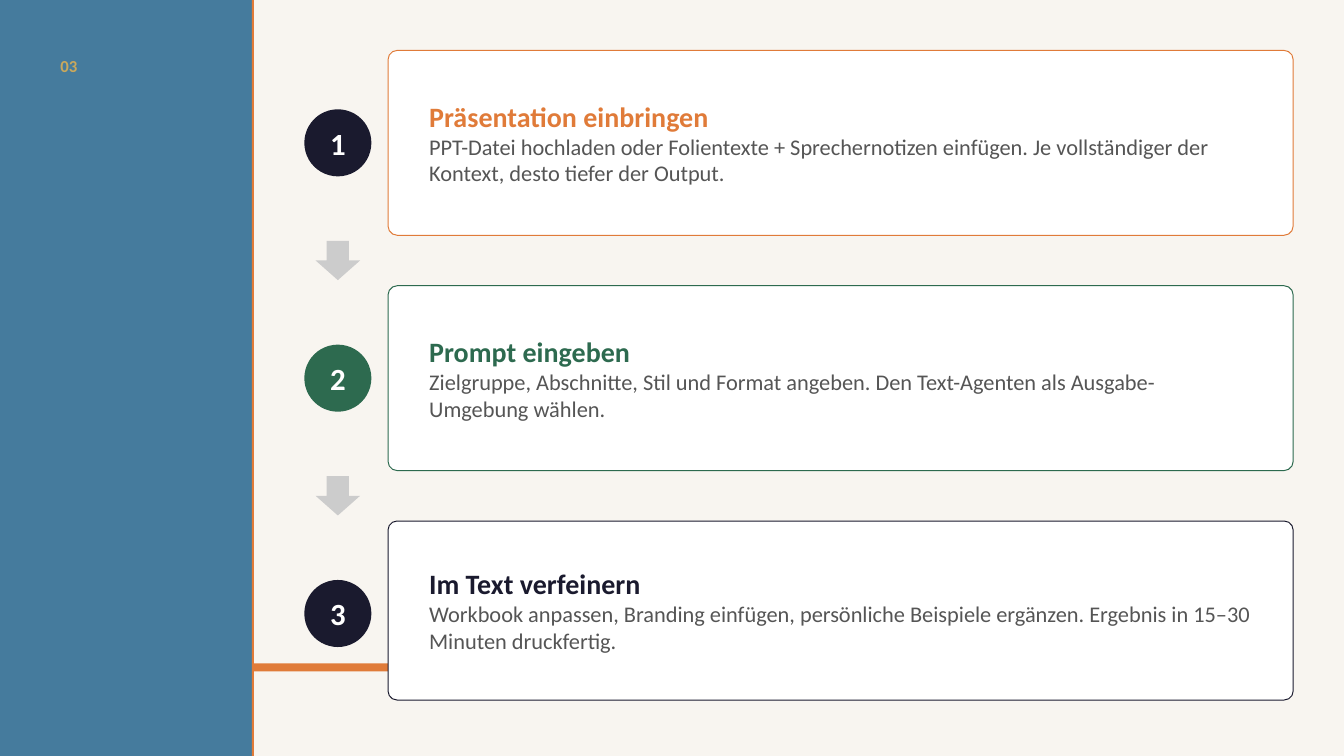
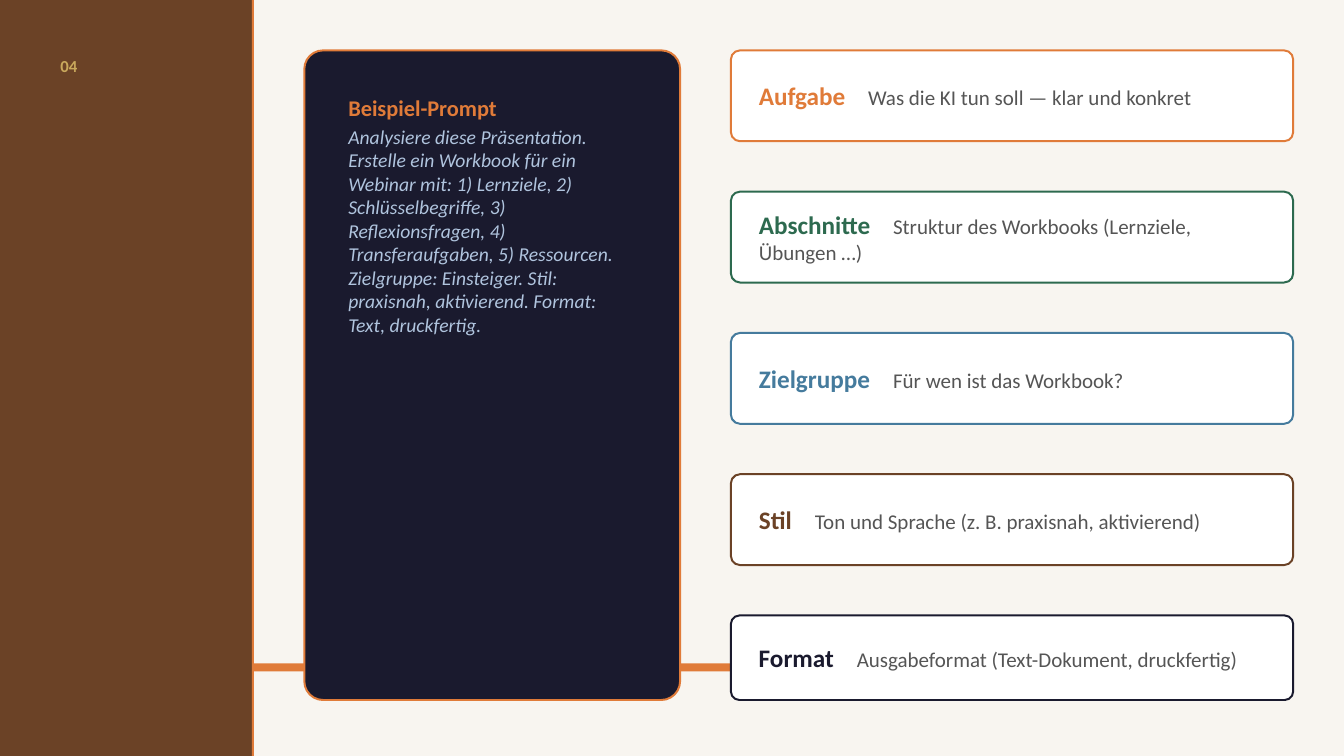
import lxml.etree
import pptx
import pptx.dml.color
import pptx.enum.shapes
import pptx.enum.text
import pptx.oxml.ns
import pptx.util

Cm = pptx.util.Cm
Pt = pptx.util.Pt
RGB = pptx.dml.color.RGBColor
SHAPE = pptx.enum.shapes.MSO_SHAPE
ANCHOR = pptx.enum.text.MSO_ANCHOR
ALIGN = pptx.enum.text.PP_ALIGN

CREAM = RGB(0xF8, 0xF5, 0xF0)
ORANGE = RGB(0xE0, 0x7B, 0x39)
BLUE = RGB(0x45, 0x7B, 0x9D)
BROWN = RGB(0x6B, 0x42, 0x26)
GREEN = RGB(0x2D, 0x6A, 0x4F)
NAVY = RGB(0x1A, 0x1A, 0x2E)
GOLD = RGB(0xC9, 0xA8, 0x5C)
GREY = RGB(0x55, 0x55, 0x55)
SILVER = RGB(0xCC, 0xCC, 0xCC)
STEEL = RGB(0xB0, 0xC4, 0xDE)
WHITE = RGB(0xFF, 0xFF, 0xFF)
FONT = "Calibri"

STEPS = [
    ("Präsentation einbringen",
     "PPT-Datei hochladen oder Folientexte + Sprechernotizen einfügen. "
     "Je vollständiger der Kontext, desto tiefer der Output.", ORANGE, NAVY),
    ("Prompt eingeben",
     "Zielgruppe, Abschnitte, Stil und Format angeben. "
     "Den Text-Agenten als Ausgabe-Umgebung wählen.", GREEN, GREEN),
    ("Im Text verfeinern",
     "Workbook anpassen, Branding einfügen, persönliche Beispiele ergänzen. "
     "Ergebnis in 15–30 Minuten druckfertig.", NAVY, NAVY),
]
PROMPT_TITLE = "Beispiel-Prompt"
PROMPT = (
    "Analysiere diese Präsentation. Erstelle ein Workbook für ein Webinar mit: "
    "1) Lernziele, 2) Schlüsselbegriffe, 3) Reflexionsfragen, 4) Transferaufgaben, "
    "5) Ressourcen. Zielgruppe: Einsteiger. Stil: praxisnah, aktivierend. "
    "Format: Text, druckfertig."
)
FIELDS = [
    ("Aufgabe", "Was die KI tun soll — klar und konkret", ORANGE, 2.75),
    ("Abschnitte", "Struktur des Workbooks (Lernziele, Übungen …)", GREEN, 3.38),
    ("Zielgruppe", "Für wen ist das Workbook?", BLUE, 3.38),
    ("Stil", "Ton und Sprache (z. B. praxisnah, aktivierend)", BROWN, 1.41),
    ("Format", "Ausgabeformat (Text-Dokument, druckfertig)", NAVY, 2.47),
]

SLIDE_W, SLIDE_H = 33.87, 19.05
SIDEBAR_W = 6.35
LEFT, TOP, RIGHT, BOTTOM = 7.67, 1.27, 32.59, 17.64
GAP = 1.27
STEP_LEFT, STEP_H = 9.78, 4.66
CIRCLE = 1.69
ARROW_W, ARROW_H = 1.12, 0.99
PROMPT_W = 9.47
FIELD_LEFT, FIELD_H = 18.42, 2.29


def add_run(p, text, size, color, bold=False, italic=False):
    r = p.add_run()
    r.text = text
    r.font.name = FONT
    r.font.size = Pt(size)
    r.font.color.rgb = color
    r.font.bold = bold
    r.font.italic = italic


def add_shape(slide, kind, left, top, width, height, fill):
    sp = slide.shapes.add_shape(kind, Cm(left), Cm(top), Cm(width), Cm(height))
    sp.shadow.inherit = False
    sp.fill.solid()
    sp.fill.fore_color.rgb = fill
    sp.line.fill.background()
    return sp


def add_card(slide, left, top, width, height, fill, line, line_w, radius, inset_x, inset_y):
    sp = add_shape(slide, SHAPE.ROUNDED_RECTANGLE, left, top, width, height, fill)
    sp.adjustments[0] = radius
    sp.line.color.rgb = line
    sp.line.width = Pt(line_w)
    tf = sp.text_frame
    tf.word_wrap = True
    tf.vertical_anchor = ANCHOR.MIDDLE
    tf.margin_left = tf.margin_right = Cm(inset_x)
    tf.margin_top = tf.margin_bottom = Cm(inset_y)
    tf.paragraphs[0].alignment = ALIGN.LEFT
    return tf


def add_paragraph(tf):
    p = tf.add_paragraph()
    p.alignment = ALIGN.LEFT
    return p


def add_tab_stop(p, pos):
    tabs = lxml.etree.SubElement(p._p.get_or_add_pPr(), pptx.oxml.ns.qn("a:tabLst"))
    lxml.etree.SubElement(tabs, pptx.oxml.ns.qn("a:tab"), pos=str(Cm(pos)), algn="l")


def column(items, height):
    for i, item in enumerate(items):
        top = TOP + i * (height + GAP)
        yield i, item, top, min(height, BOTTOM - top)


def style_master(prs):
    master = prs.slide_master
    master.background.fill.solid()
    master.background.fill.fore_color.rgb = CREAM
    bar = add_shape(prs.slides[0], SHAPE.RECTANGLE, 0, 16.72, 25.4, 0.2, ORANGE)
    bar.element.nvSpPr.cNvPr.set("id", "100")
    master.element.cSld.spTree.append(bar.element)


def add_slide(prs, number, color):
    slide = prs.slides.add_slide(prs.slide_layouts[6])
    add_shape(slide, SHAPE.RECTANGLE, 0, 0, SIDEBAR_W, SLIDE_H, color)
    add_shape(slide, SHAPE.RECTANGLE, SIDEBAR_W, 0, 0.05, SLIDE_H, ORANGE)
    tb = slide.shapes.add_textbox(Cm(1.27), Cm(1.27), Cm(3.81), Cm(1.12))
    tb.text_frame.word_wrap = True
    add_run(tb.text_frame.paragraphs[0], number, 12, GOLD, bold=True)
    return slide


def build_steps(prs):
    slide = add_slide(prs, "03", BLUE)
    center = LEFT + CIRCLE / 2
    for i, (title, text, color, circle_color), top, height in column(STEPS, STEP_H):
        sp = add_shape(slide, SHAPE.OVAL, LEFT, top + (STEP_H - CIRCLE) / 2,
                       CIRCLE, CIRCLE, circle_color)
        sp.text_frame.vertical_anchor = ANCHOR.MIDDLE
        p = sp.text_frame.paragraphs[0]
        p.alignment = ALIGN.CENTER
        add_run(p, str(i + 1), 22, WHITE, bold=True)
        tf = add_card(slide, STEP_LEFT, top, RIGHT - STEP_LEFT, height,
                      WHITE, color, 0.72, 0.05, 0.97, 0.64)
        add_run(tf.paragraphs[0], title, 20, color, bold=True)
        add_run(add_paragraph(tf), text, 16, GREY)
        if i < len(STEPS) - 1:
            add_shape(slide, SHAPE.DOWN_ARROW, center - ARROW_W / 2,
                      top + STEP_H + (GAP - ARROW_H) / 2, ARROW_W, ARROW_H, SILVER)


def build_prompt(prs):
    slide = add_slide(prs, "04", BROWN)
    tf = add_card(slide, LEFT, TOP, PROMPT_W, BOTTOM - TOP,
                  NAVY, ORANGE, 1.42, 0.05, 0.97, 0.97)
    tf.vertical_anchor = ANCHOR.TOP
    add_run(tf.paragraphs[0], PROMPT_TITLE, 16, ORANGE, bold=True)
    p = add_paragraph(tf)
    p.space_before = Pt(2.4)
    add_run(p, PROMPT, 14, STEEL, italic=True)
    for _, (label, text, color, tab), top, height in column(FIELDS, FIELD_H):
        tf = add_card(slide, FIELD_LEFT, top, RIGHT - FIELD_LEFT, height,
                      WHITE, color, 1.42, 0.1, 0.64, 0.3)
        p = tf.paragraphs[0]
        add_tab_stop(p, tab)
        add_run(p, label + "\t", 18, color, bold=True)
        add_run(p, text, 15, GREY)


def main():
    prs = pptx.Presentation()
    prs.slide_width = Cm(SLIDE_W)
    prs.slide_height = Cm(SLIDE_H)
    build_steps(prs)
    build_prompt(prs)
    style_master(prs)
    prs.save("out.pptx")


if __name__ == "__main__":
    main()
